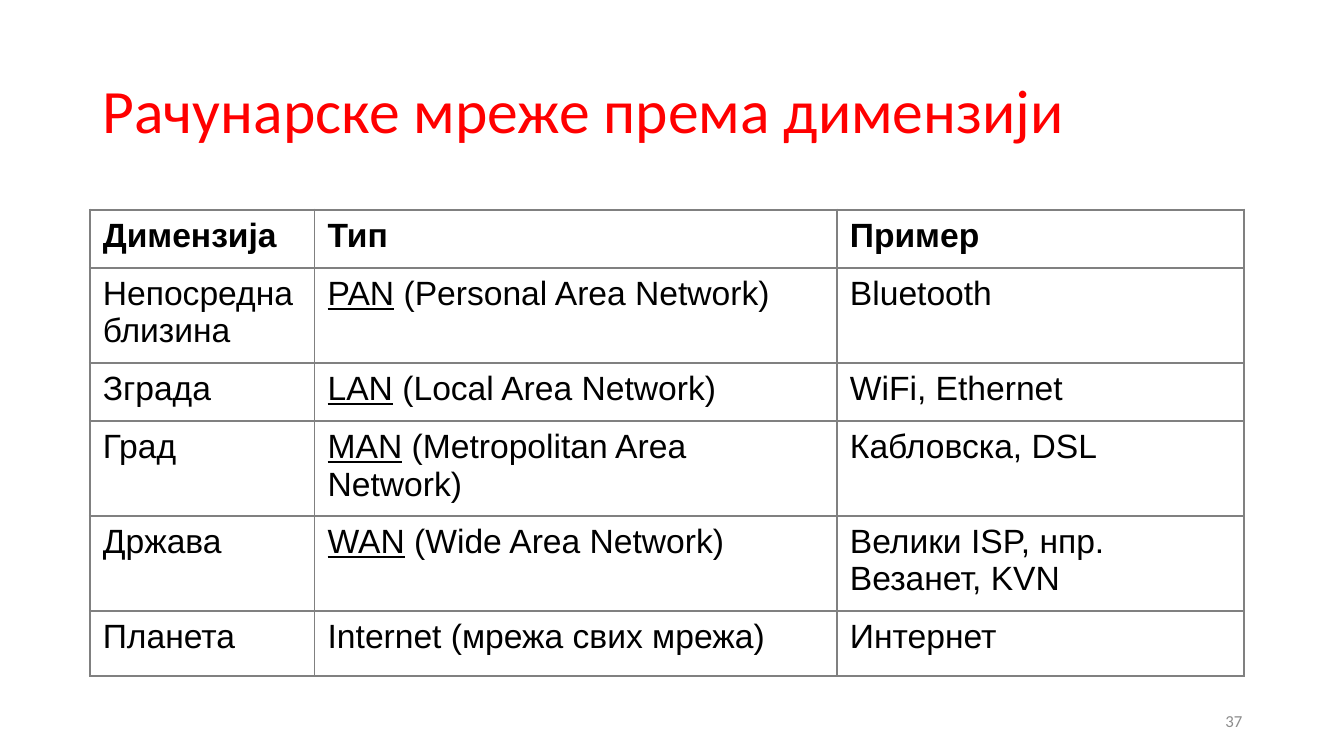
import pptx
import pptx.dml.color
import pptx.enum.text
import pptx.oxml
import pptx.oxml.ns
import pptx.util
from pptx.util import Inches

COLORS = {"title": "FF0000", "text": "000000", "number": "8C8C8C", "border": "808080"}
COLUMN_WIDTHS = [2.23, 5.18, 4.04]
ROW_HEIGHTS = [0.58] * 5 + [0.65]
HEADERS = ["Димензија", "Тип", "Пример"]
# Dimension, underlined abbreviation, rest of the type, example
NETWORKS = [
    ("Непосредна близина", "PAN", " (Personal Area Network)", "Bluetooth"),
    ("Зграда", "LAN", " (Local Area Network)", "WiFi, Ethernet"),
    ("Град", "MAN", " (Metropolitan Area Network)", "Кабловска, DSL"),
    ("Држава", "WAN", " (Wide Area Network)", "Велики ISP, нпр. Везанет, KVN"),
    ("Планета", "", "Internet (мрежа свих мрежа)", "Интернет"),
]


def style_font(font, name, size, color, bold=False):
    font.name = name
    font.size = pptx.util.Pt(size)
    font.bold = bold
    font.color.rgb = pptx.dml.color.RGBColor.from_string(COLORS[color])


def add_text(slide, box, text, size, color, align, line_spacing=1.0):
    shape = slide.shapes.add_textbox(*(Inches(value) for value in box))
    frame = shape.text_frame
    frame.word_wrap = True
    frame.vertical_anchor = pptx.enum.text.MSO_ANCHOR.MIDDLE
    paragraph = frame.paragraphs[0]
    paragraph.text = text
    paragraph.alignment = align
    paragraph.line_spacing = line_spacing
    style_font(paragraph.font, "Calibri", size, color)


def add_borders(cell, width=1.5):
    properties = cell._tc.get_or_add_tcPr()
    namespace = pptx.oxml.ns.nsdecls("a")
    # Borders must come before the fill in the cell properties
    for index, side in enumerate(("lnL", "lnR", "lnT", "lnB")):
        line = pptx.oxml.parse_xml(
            f'<a:{side} {namespace} w="{pptx.util.Pt(width)}"><a:solidFill>'
            f'<a:srgbClr val="{COLORS["border"]}"/></a:solidFill></a:{side}>'
        )
        properties.insert(index, line)


def fill_cell(cell, text, underlined="", bold=False):
    cell.fill.background()
    add_borders(cell)
    cell.margin_left = cell.margin_right = Inches(0.13)
    cell.margin_top = cell.margin_bottom = Inches(0.07)
    paragraph = cell.text_frame.paragraphs[0]
    style_font(paragraph.font, "Arial", 24, "text", bold)
    if underlined:
        run = paragraph.add_run()
        run.text = underlined
        run.font.underline = True
    paragraph.add_run().text = text


def add_network_table(slide):
    height = Inches(4.61)
    shape = slide.shapes.add_table(
        len(ROW_HEIGHTS), len(COLUMN_WIDTHS),
        Inches(0.89), Inches(2.08), Inches(11.44), height,
    )
    table = shape.table
    table.first_row = table.horz_banding = False
    for column, width in zip(table.columns, COLUMN_WIDTHS):
        column.width = Inches(width)
    for row, row_height in zip(table.rows, ROW_HEIGHTS):
        row.height = Inches(row_height)
    shape.height = height

    for column, header in enumerate(HEADERS):
        fill_cell(table.cell(0, column), header, bold=True)
    for row, (dimension, abbreviation, network, example) in enumerate(NETWORKS, 1):
        fill_cell(table.cell(row, 0), dimension)
        fill_cell(table.cell(row, 1), network, underlined=abbreviation)
        fill_cell(table.cell(row, 2), example)


def main():
    presentation = pptx.Presentation()
    presentation.slide_width = Inches(13.33)
    presentation.slide_height = Inches(7.5)
    slide = presentation.slides.add_slide(presentation.slide_layouts[6])
    align = pptx.enum.text.PP_ALIGN

    # Title
    add_text(slide, (0.92, 0.4, 11.5, 1.45), "Рачунарске мреже према димензији",
             44, "title", align.LEFT, line_spacing=0.9)
    # Networks by size
    add_network_table(slide)
    # Slide number
    add_text(slide, (9.42, 6.95, 3, 0.4), "37", 12, "number", align.RIGHT)

    presentation.save("out.pptx")


if __name__ == "__main__":
    main()
